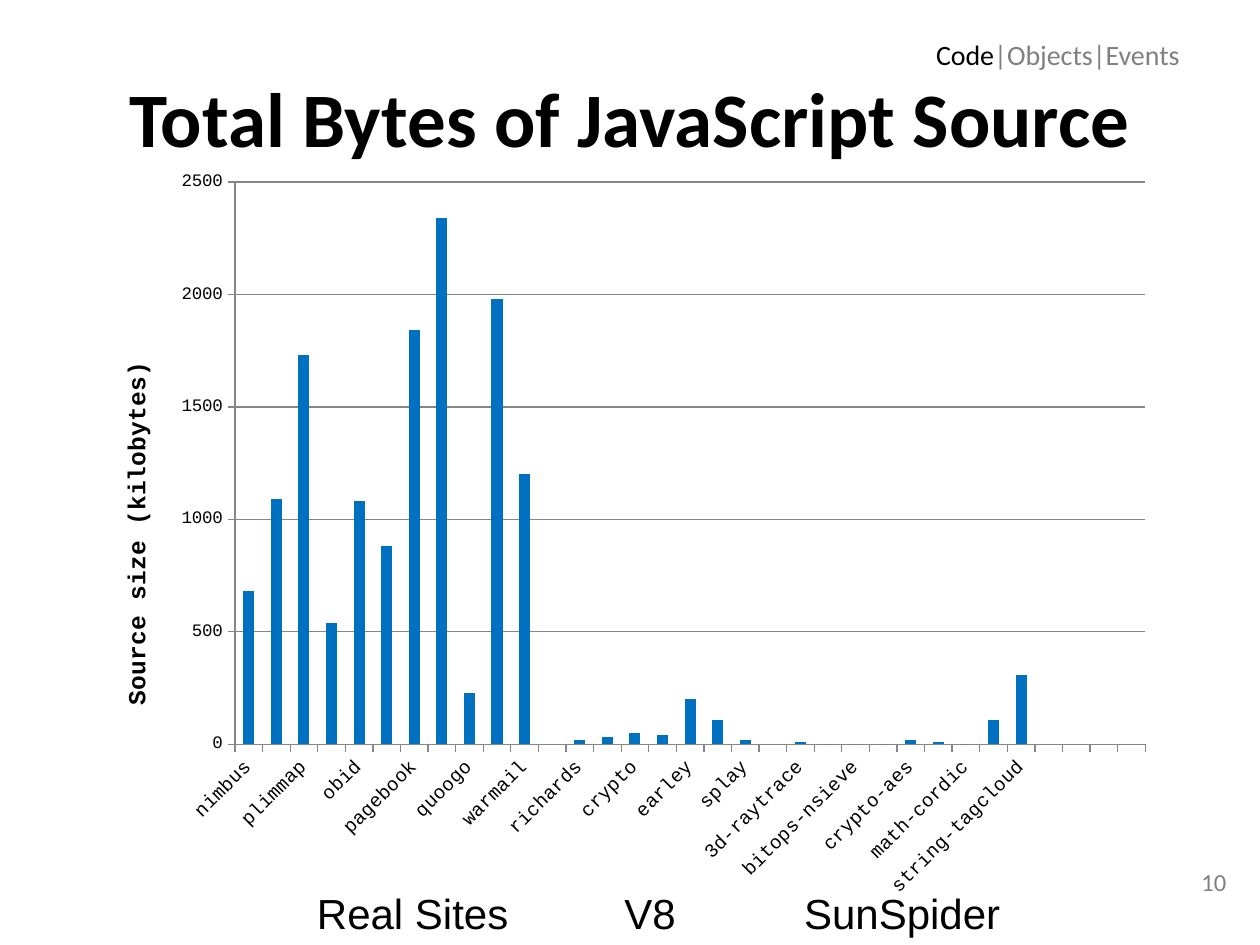
from lxml import etree
from pptx import Presentation
from pptx.chart.data import CategoryChartData
from pptx.dml.color import RGBColor
from pptx.enum.chart import XL_CHART_TYPE, XL_TICK_MARK
from pptx.enum.text import MSO_ANCHOR, PP_ALIGN
from pptx.oxml.ns import qn
from pptx.util import Cm, Pt

COLUMNS = XL_CHART_TYPE.COLUMN_CLUSTERED
TICK_OUT, TICK_NONE = XL_TICK_MARK.OUTSIDE, XL_TICK_MARK.NONE
LEFT, CENTER, RIGHT = PP_ALIGN.LEFT, PP_ALIGN.CENTER, PP_ALIGN.RIGHT
TOP, MIDDLE = MSO_ANCHOR.TOP, MSO_ANCHOR.MIDDLE
BLACK, GRAY, BLUE = "000000", "808080", "0070C0"

# Content: (benchmark, kilobytes); a gap separates the groups
REAL_SITES = [("nimbus", 680), ("plim", 1090), ("plimmap", 1730), ("nvn", 540),
              ("obid", 1080), ("ledgerist", 880), ("pagebook", 1840),
              ("zmail", 2340), ("quoogo", 230), ("quoogomap", 1980),
              ("warmail", 1200)]
V8 = [("richards", 20), ("deltablue", 30), ("crypto", 50), ("raytrace", 40),
      ("earley", 200), ("regexp", 110), ("splay", 20)]
SUNSPIDER = [("3d-raytrace", 10), ("access-nbody", 0), ("bitops-nsieve", 0),
             ("controlflow", 0), ("crypto-aes", 20), ("date-xparb", 10),
             ("math-cordic", 0), ("regexp-dna", 110), ("string-tagcloud", 310)]
GAP = [("", None)]
BARS = REAL_SITES + GAP + V8 + GAP + SUNSPIDER + GAP * 4

# Text boxes: place in cm, runs of (text, colour), format, alignment, anchor
TEXTS = [
    ((1.27, 0.76, 22.86, 3.18), [("Total Bytes of JavaScript Source", BLACK)],
     {"name": "Calibri", "size": Pt(44), "bold": True}, CENTER, MIDDLE),
    ((19.05, 17.35, 5.92, 1.32), [("10", GRAY)],
     {"name": "Calibri", "size": Pt(14)}, RIGHT, TOP),
    ((6.14, 17.77, 14.43, 1.27), [("Real Sites\tV8\tSunSpider", BLACK)],
     {"name": "Arial", "size": Pt(24)}, LEFT, TOP),
    ((18.62, 0.64, 6.35, 0.94), [("Code", BLACK), ("|Objects|Events", GRAY)],
     {"name": "Calibri", "size": Pt(16)}, LEFT, TOP),
]
GROUP_TABS = [6.2, 9.82]


def color(value):
    return RGBColor.from_string(value)


def format_font(font, hex_color, **values):
    for name, value in values.items():
        setattr(font, name, value)
    font.color.rgb = color(hex_color)


def add_tabs(paragraph, positions):
    tabs = etree.SubElement(paragraph._p.get_or_add_pPr(), qn("a:tabLst"))
    for position in positions:
        etree.SubElement(tabs, qn("a:tab"), pos=str(Cm(position)), algn="l")


def add_text(slide, place, runs, font_values, alignment, anchor):
    frame = slide.shapes.add_textbox(*map(Cm, place)).text_frame
    frame.word_wrap = True
    frame.vertical_anchor = anchor
    paragraph = frame.paragraphs[0]
    paragraph.alignment = alignment
    if "\t" in runs[0][0]:
        add_tabs(paragraph, GROUP_TABS)
    for text, hex_color in runs:
        run = paragraph.add_run()
        run.text = text
        format_font(run.font, hex_color, **font_values)


def set_layout(element, index, **values):
    """Place a chart part by fractions of the chart area."""
    for old in element.findall(qn("c:layout")):
        element.remove(old)
    layout = etree.Element(qn("c:layout"))
    element.insert(index, layout)
    manual = etree.SubElement(layout, qn("c:manualLayout"))
    for name, value in values.items():
        etree.SubElement(manual, qn("c:" + name), val=str(value))


def add_size_chart(slide):
    data = CategoryChartData()
    data.categories = [name for name, size in BARS]
    data.add_series("Series 1", [size for name, size in BARS])
    place = map(Cm, (1.93, 3.21, 21.59, 15.32))
    chart = slide.shapes.add_chart(COLUMNS, *place, data).chart
    chart.has_legend = chart.has_title = False
    format_font(chart.font, BLACK, name="Courier New", size=Pt(10))

    plot = chart.plots[0]
    plot.gap_width = 150
    plot.vary_by_categories = False
    bar_fill = plot.series[0].format.fill
    bar_fill.solid()
    bar_fill.fore_color.rgb = color(BLUE)
    set_layout(chart._chartSpace.chart.plotArea, 0, layoutTarget="inner",
               xMode="edge", yMode="edge", x=0.13, y=0.03, w=0.85, h=0.74)

    # Axes
    categories, sizes = chart.category_axis, chart.value_axis
    sizes.minimum_scale, sizes.maximum_scale, sizes.major_unit = 0, 2500, 500
    sizes.has_major_gridlines = True
    for axis, size in ((categories, 11), (sizes, 10)):
        axis.major_tick_mark, axis.minor_tick_mark = TICK_OUT, TICK_NONE
        format_font(axis.tick_labels.font, BLACK, name="Courier New",
                    size=Pt(size))
    for part in (categories, sizes, sizes.major_gridlines):
        part.format.line.color.rgb = color("868686")
        part.format.line.width = Pt(0.75)

    # Slanted labels on every second category
    axis_element = categories._element
    axis_element.find(qn("c:txPr")).find(qn("a:bodyPr")).set("rot", "-2700000")
    skip = etree.Element(qn("c:tickLblSkip"), val="2")
    axis_element.find(qn("c:noMultiLvlLbl")).addprevious(skip)

    # Axis title
    title = sizes.axis_title
    title.text_frame.text = "Source size (kilobytes)"
    format_font(title.text_frame.paragraphs[0].runs[0].font, BLACK,
                name="Courier New", size=Pt(14), bold=True)
    body = title.text_frame._txBody.find(qn("a:bodyPr"))
    body.set("rot", "-5400000")
    body.set("vert", "horz")
    set_layout(title._element, 1, xMode="edge", yMode="edge", x=0.02, y=0.26)


def main():
    presentation = Presentation()
    presentation.slide_width, presentation.slide_height = Cm(25.4), Cm(19.05)
    slide = presentation.slides.add_slide(presentation.slide_layouts[6])
    add_size_chart(slide)
    for text in TEXTS:
        add_text(slide, *text)
    presentation.save("out.pptx")


if __name__ == "__main__":
    main()
